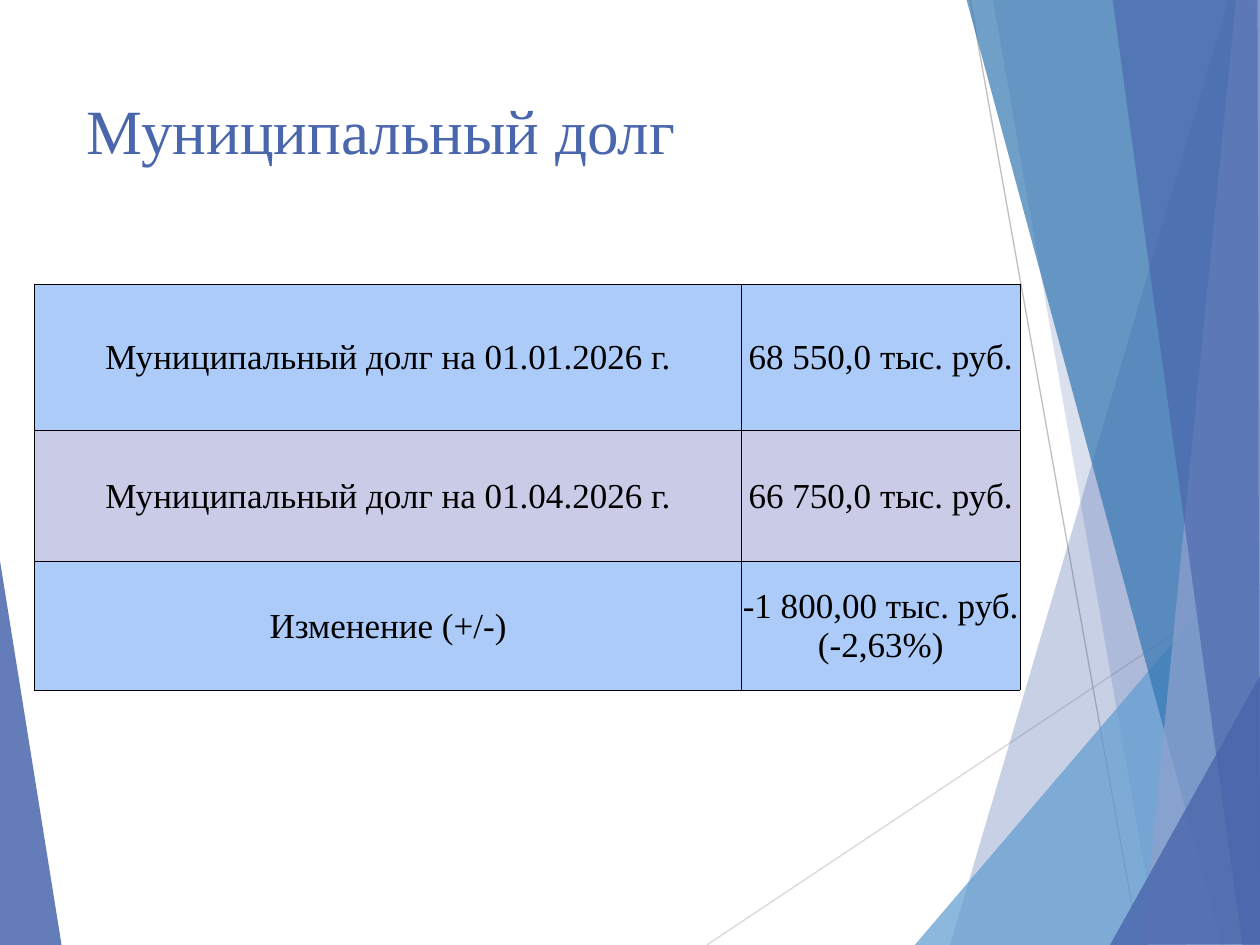
from dataclasses import dataclass

from lxml.etree import SubElement
from pptx import Presentation
from pptx.dml.color import RGBColor
from pptx.enum.shapes import MSO_CONNECTOR
from pptx.enum.text import MSO_ANCHOR, PP_ALIGN
from pptx.oxml.ns import qn
from pptx.util import Inches, Pt


@dataclass(frozen=True)
class Theme:
    font: str = "Times New Roman"
    title_size: int = 36
    cell_size: int = 20
    indigo: str = "4A66AC"
    sky: str = "629DD1"
    blue: str = "3477B2"
    periwinkle: str = "90A2CF"
    text: str = "000000"
    row_fills: tuple = ("ACCBF9", "C9CBE7")
    border: str = "000000"
    border_width: float = 0.25
    ray_width: float = 0.75


THEME = Theme()
WIDTH, HEIGHT = Inches(10), Inches(7.5)

# Corner points are percentages of the slide's width and height
LEFT_WEDGE = (THEME.indigo, 85, [(-0.1, 58.5), (4.9, 100.1), (-0.1, 100)])
RAYS = [
    ("D9D9D9", (56.1, 100), (100.1, 60.9)),
    ("BFBFBF", (77, 0), (90.4, 100)),
]
FACETS = [
    (THEME.indigo, 30, [(97.5, 0), (75.4, 100), (100.2, 100.1), (100.1, 0.1)]),
    (THEME.indigo, 20, [(78.8, -0.1), (91.9, 100), (100.1, 100), (100.1, -0.1)]),
    (THEME.sky, 72, [(72.6, 100), (100, 57.2), (100.1, 100)]),
    (THEME.blue, 70, [(76.7, -0.1), (97, 100), (100.1, 99.9), (100.1, -0.1)]),
    (THEME.periwinkle, 70, [(98.1, -0.1), (90.7, 100), (100.1, 100), (100, -0.1)]),
    (THEME.indigo, 65, [(88.3, -0.1), (98.6, 100), (100, 100), (99.8, -0.1)]),
    (THEME.indigo, 80, [(88.1, 100), (100.1, 71.3), (100.1, 99.9)]),
]

DEBT_ROWS = [
    ("Муниципальный долг на 01.01.2026 г.", "68 550,0 тыс. руб."),
    ("Муниципальный долг на 01.04.2026 г.", "66 750,0 тыс. руб."),
    ("Изменение (+/-)", "-1 800,00 тыс. руб. (-2,63%)"),
]
COLUMN_SHARES = (56.1, 22.1)
ROW_SHARES = (15.47, 13.87, 13.6)


def across(share):
    return round(WIDTH * share / 100)


def down(share):
    return round(HEIGHT * share / 100)


def place(point):
    return across(point[0]), down(point[1])


def add_facet(page, color, opacity, points):
    start, *others = [place(point) for point in points]
    builder = page.shapes.build_freeform(*start, scale=1.0)
    builder.add_line_segments(others, close=True)
    facet = builder.convert_to_shape()
    facet.shadow.inherit = False
    facet.line.fill.background()
    facet.fill.solid()
    facet.fill.fore_color.rgb = RGBColor.from_string(color)
    color_element = facet._element.spPr.find(qn("a:solidFill"))[0]
    SubElement(color_element, qn("a:alpha"), val=str(opacity * 1000))


def add_ray(page, color, start, end):
    ray = page.shapes.add_connector(MSO_CONNECTOR.STRAIGHT, *place(start), *place(end))
    ray.line.color.rgb = RGBColor.from_string(color)
    ray.line.width = Pt(THEME.ray_width)
    SubElement(ray._element.spPr, qn("a:effectLst"))


def style_paragraph(para, size, color, align):
    para.alignment = align
    para.font.name = THEME.font
    para.font.size = Pt(size)
    para.font.color.rgb = RGBColor.from_string(color)


def add_title(page, text):
    box = page.shapes.add_textbox(across(5.9), down(9.07), across(69.4), down(19.2))
    box.text_frame.word_wrap = True
    para = box.text_frame.paragraphs[0]
    para.text = text
    style_paragraph(para, THEME.title_size, THEME.indigo, PP_ALIGN.LEFT)


def add_cell_borders(cell):
    properties = cell._tc.get_or_add_tcPr()
    for side in ("lnL", "lnR", "lnT", "lnB"):
        line = SubElement(properties, qn(f"a:{side}"), w=str(Pt(THEME.border_width)))
        fill = SubElement(line, qn("a:solidFill"))
        SubElement(fill, qn("a:srgbClr"), val=THEME.border)


def fill_cell(cell, text, color):
    add_cell_borders(cell)
    cell.fill.solid()
    cell.fill.fore_color.rgb = RGBColor.from_string(color)
    cell.vertical_anchor = MSO_ANCHOR.MIDDLE
    cell.margin_left = cell.margin_right = cell.margin_top = Inches(0.01)
    cell.margin_bottom = 0
    cell.text = text
    style_paragraph(cell.text_frame.paragraphs[0], THEME.cell_size, THEME.text, PP_ALIGN.CENTER)


def add_debt_table(page):
    frame = page.shapes.add_table(
        len(DEBT_ROWS), len(COLUMN_SHARES), across(2.75), down(30.07),
        across(sum(COLUMN_SHARES)), down(sum(ROW_SHARES)))
    table = frame.table
    table.first_row = table.horz_banding = False
    for column, share in zip(table.columns, COLUMN_SHARES):
        column.width = across(share)
    for index, (row, share) in enumerate(zip(table.rows, ROW_SHARES)):
        row.height = down(share)
        color = THEME.row_fills[index % len(THEME.row_fills)]
        for cell, text in zip(row.cells, DEBT_ROWS[index]):
            fill_cell(cell, text, color)


def main():
    deck = Presentation()
    deck.slide_width, deck.slide_height = WIDTH, HEIGHT
    page = deck.slides.add_slide(deck.slide_layouts[6])

    # Decorative background
    add_facet(page, *LEFT_WEDGE)
    for ray in RAYS:
        add_ray(page, *ray)
    for facet in FACETS:
        add_facet(page, *facet)

    # Content
    add_debt_table(page)
    add_title(page, "Муниципальный долг")
    deck.save("out.pptx")


if __name__ == "__main__":
    main()
